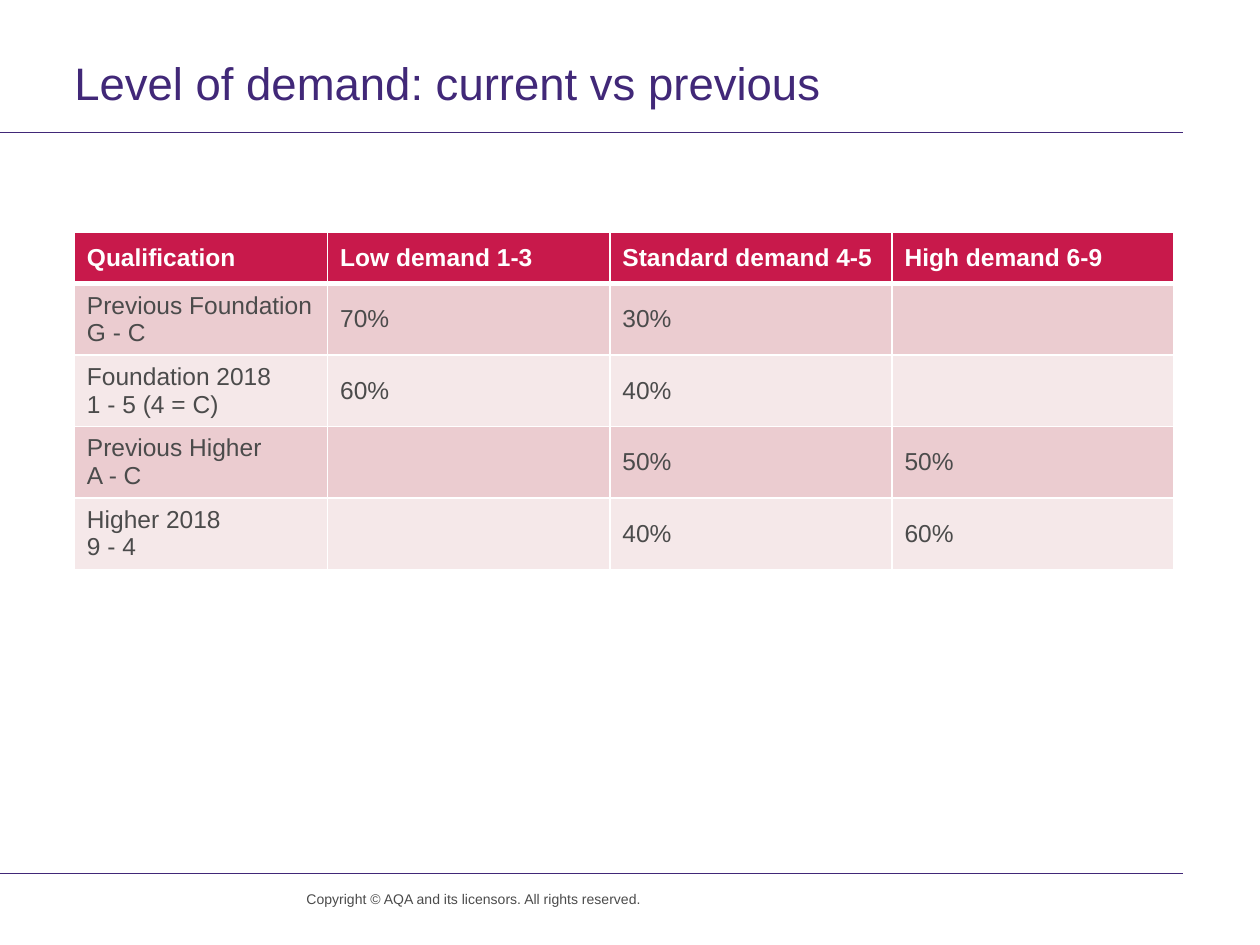
from lxml.etree import SubElement
from pptx import Presentation
from pptx.dml.color import RGBColor as Rgb
from pptx.enum.shapes import MSO_CONNECTOR as Link
from pptx.enum.text import MSO_ANCHOR as Anchor, PP_ALIGN as Align
from pptx.oxml.ns import qn
from pptx.util import Inches, Pt

HUES = {"purple": "412878", "grey": "4B4B4B", "white": "FFFFFF",
        "red": "C8194B", "rose": "EBCCD0", "blush": "F5E8E9"}
ROWS = [
    ["Qualification", "Low demand 1-3", "Standard demand 4-5", "High demand 6-9"],
    ["Previous Foundation\nG - C", "70%", "30%", ""],
    ["Foundation 2018\n1 - 5 (4 = C)", "60%", "40%", ""],
    ["Previous Higher\nA - C", "", "50%", "50%"],
    ["Higher 2018\n9 - 4", "", "40%", "60%"],
]
WIDTHS = [2.01, 2.24, 2.24, 2.24]
HEIGHTS = [0.41] + [0.54] * 4


def hue(name):
    """Return a named colour."""
    return Rgb.from_string(HUES[name])


def add_run(para, text, size, tone, bold=False):
    """Add one styled run."""
    run = para.add_run()
    run.text = text
    font = run.font
    font.name, font.size, font.bold = "Arial", Pt(size), bold
    font.color.rgb = hue(tone)


def add_rule(slide, top):
    """Draw a thin rule from the left edge."""
    rule = slide.shapes.add_connector(
        Link.STRAIGHT, 0, Inches(top), Inches(9.39), Inches(top))
    rule.line.color.rgb = hue("purple")
    rule.line.width = Pt(0.6)
    SubElement(rule._element.spPr, qn("a:effectLst"))


def add_text(slide, place, text, size, tone, lead, align=Align.LEFT):
    """Add a one-line text box without margins."""
    frame = slide.shapes.add_textbox(*map(Inches, place)).text_frame
    frame.word_wrap = True
    frame.margin_left = frame.margin_right = 0
    frame.margin_top = frame.margin_bottom = 0
    para = frame.paragraphs[0]
    para.alignment, para.line_spacing = align, Pt(lead)
    add_run(para, text, size, tone)


def add_edges(cell, base):
    """Put white borders on a cell, before its fill."""
    props = cell._tc.get_or_add_tcPr()
    for side, width in zip("LRTB", (1, 1, 1, base)):
        edge = SubElement(props, qn(f"a:ln{side}"), w=str(Pt(width)))
        fill = SubElement(edge, qn("a:solidFill"))
        SubElement(fill, qn("a:srgbClr"), val=HUES["white"])


def fill_cell(cell, text, head, shade):
    """Set the borders, fill and text of a cell."""
    add_edges(cell, 3 if head else 1)
    cell.fill.solid()
    cell.fill.fore_color.rgb = hue(shade)
    cell.vertical_anchor = Anchor.MIDDLE
    para = cell.text_frame.paragraphs[0]
    para.font.size = Pt(14)
    for pos, line in enumerate(text.split("\n") if text else []):
        if pos:
            para.add_line_break()
        add_run(para, line, 14, "white" if head else "grey", head)


def add_grid(slide):
    """Add the table of demand levels."""
    place = map(Inches, (0.59, 1.84, sum(WIDTHS), sum(HEIGHTS)))
    grid = slide.shapes.add_table(len(ROWS), len(WIDTHS), *place).table
    for col, width in zip(grid.columns, WIDTHS):
        col.width = Inches(width)
    for row, height in zip(grid.rows, HEIGHTS):
        row.height = Inches(height)
    for i, row in enumerate(ROWS):
        shade = "red" if i == 0 else ("blush", "rose")[i % 2]
        for j, text in enumerate(row):
            fill_cell(grid.cell(i, j), text, i == 0, shade)


def main():
    """Build and save the slide."""
    deck = Presentation()
    deck.slide_width, deck.slide_height = Inches(10), Inches(7.5)
    slide = deck.slides.add_slide(deck.slide_layouts[6])
    for top in (1.05, 6.93):
        add_rule(slide, top)
    add_text(slide, (0.59, 0.48, 8.8, 0.47),
             "Level of demand: current vs previous", 26, "purple", 28)
    add_text(slide, (2.16, 7.06, 2.93, 0.26),
             "Copyright © AQA and its licensors. All rights reserved.",
             8, "grey", 10, Align.RIGHT)
    add_grid(slide)
    deck.save("out.pptx")


if __name__ == "__main__":
    main()
